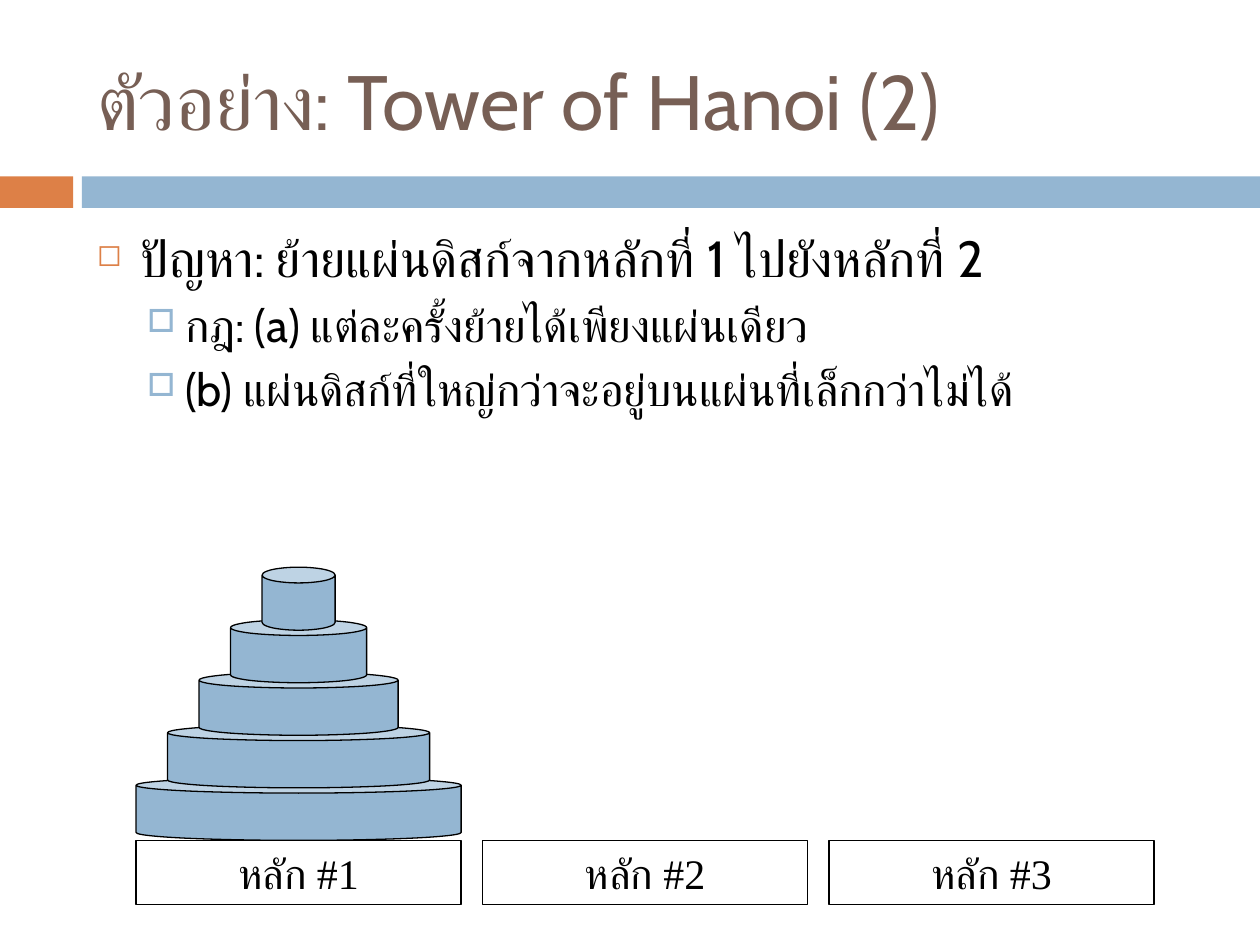
from lxml import etree
from pptx import Presentation
from pptx.dml.color import RGBColor
from pptx.enum.shapes import MSO_SHAPE
from pptx.enum.text import MSO_ANCHOR, MSO_AUTO_SIZE, PP_ALIGN
from pptx.oxml.ns import qn
from pptx.util import Inches, Pt

RECT, CAN = MSO_SHAPE.RECTANGLE, MSO_SHAPE.CAN
MIDDLE = MSO_ANCHOR.MIDDLE
LEFT, CENTER = PP_ALIGN.LEFT, PP_ALIGN.CENTER
NO_FIT = MSO_AUTO_SIZE.NONE

BLUE, ORANGE, BROWN = "94B6D2", "DD8047", "775F55"
BLACK, WHITE = "000000", "FFFFFF"
SANS, SERIF = "Cabin", "Times New Roman"

# Grid of pegs and disks, in inches
EDGE, BASE = 1.08, 6.67
PEG_W, PEG_H, PEG_STEP = 2.58, 0.51, 2.75
DISKS, DISK_H, RISE, INSET = 5, 0.5, 0.417, 0.25

TITLE = "ตัวอย่าง: Tower of Hanoi (2)"
# Level, text
POINTS = [
    (0, "ปัญหา: ย้ายแผ่นดิสก์จากหลักที่ 1 ไปยังหลักที่ 2"),
    (1, "กฎ: (a) แต่ละครั้งย้ายได้เพียงแผ่นเดียว"),
    (1, "(b) แผ่นดิสก์ที่ใหญ่กว่าจะอยู่บนแผ่นที่เล็กกว่าไม่ได้"),
]
# Size, space before, indent, hang, bullet, bullet colour, bullet percent
LEVELS = [
    (29, 7, 0.35, 0.35, "◻", ORANGE, 60),
    (26, 5.5, 0.7, 0.3, "□", BLUE, 70),
]


def color(code):
    return RGBColor.from_string(code)


def style(para, size, face, ink):
    font = para.font
    font.size, font.name = Pt(size), face
    font.color.rgb = color(ink)


def add_block(slide, kind, box, fill, line=None):
    shape = slide.shapes.add_shape(kind, *map(Inches, box))
    shape.shadow.inherit = False
    shape.fill.solid()
    shape.fill.fore_color.rgb = color(fill)
    if line:
        shape.line.color.rgb = color(line)
        shape.line.width = Pt(0.75)
    else:
        shape.line.fill.background()
    return shape


def set_title(slide):
    title = slide.shapes.title
    title.left, title.top, title.width, title.height = map(
        Inches, (0.67, 0.25, 8.92, 1.08))
    frame = title.text_frame
    frame.text = TITLE
    frame.auto_size, frame.vertical_anchor = NO_FIT, MIDDLE
    para = frame.paragraphs[0]
    para.alignment = LEFT
    style(para, 44, SANS, BROWN)


def add_bullet(para, indent, hang, mark, ink, share):
    props = para._p.get_or_add_pPr()
    props.set("marL", str(Inches(indent)))
    props.set("indent", str(-Inches(hang)))
    tint = etree.SubElement(props, qn("a:buClr"))
    etree.SubElement(tint, qn("a:srgbClr"), val=ink)
    etree.SubElement(props, qn("a:buSzPct"), val=str(share * 1000))
    etree.SubElement(props, qn("a:buChar"), char=mark)


def add_points(slide):
    box = slide.shapes.add_textbox(*map(Inches, (0.67, 1.75, 8.92, 2.5)))
    frame = box.text_frame
    frame.word_wrap = True
    for i, (level, text) in enumerate(POINTS):
        para = frame.add_paragraph() if i else frame.paragraphs[0]
        size, gap, *bullet = LEVELS[level]
        para.text, para.level = text, level
        para.space_before = Pt(gap)
        add_bullet(para, *bullet)
        style(para, size, SANS, BLACK)


def add_disk(slide, step):
    inset = INSET * step
    box = (EDGE + inset, BASE - DISK_H - RISE * step,
           PEG_W - 2 * inset, DISK_H)
    disk = add_block(slide, CAN, box, BLUE, BLACK)
    disk.adjustments[0] = 0.25


def add_peg(slide, col):
    box = (EDGE + PEG_STEP * col, BASE, PEG_W, PEG_H)
    frame = add_block(slide, RECT, box, WHITE, BLACK).text_frame
    frame.text = f"หลัก #{col + 1}"
    frame.vertical_anchor = MIDDLE
    para = frame.paragraphs[0]
    para.alignment = CENTER
    style(para, 24, SERIF, BLACK)


def main():
    deck = Presentation()
    deck.slide_width, deck.slide_height = Inches(10), Inches(7.5)
    slide = deck.slides.add_slide(deck.slide_layouts[5])

    # Band under the title
    add_block(slide, RECT, (0, 1.4, 0.58, 0.25), ORANGE)
    add_block(slide, RECT, (0.65, 1.4, 9.35, 0.25), BLUE)

    # Wording
    set_title(slide)
    add_points(slide)

    # Tower, from the largest disk up, and the pegs
    for step in range(DISKS):
        add_disk(slide, step)
    for col in range(3):
        add_peg(slide, col)

    deck.save("out.pptx")


if __name__ == "__main__":
    main()
